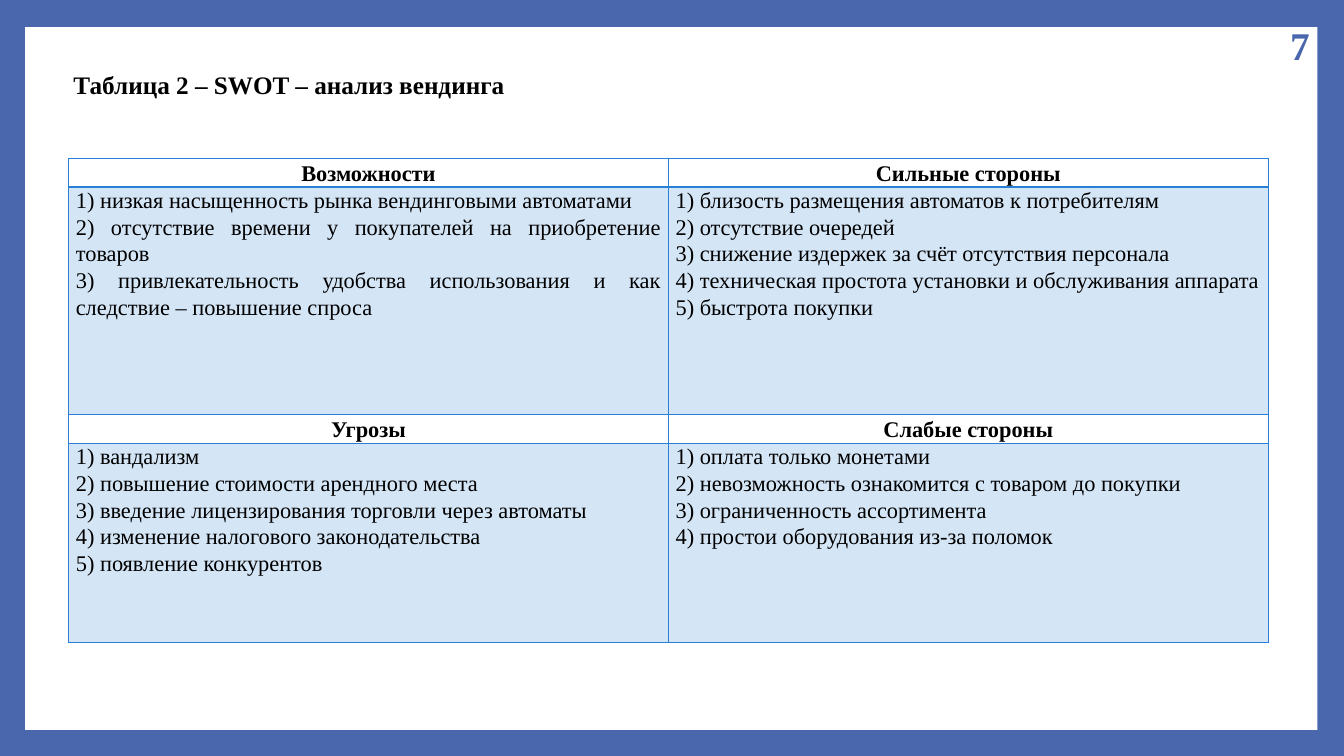
from lxml.etree import SubElement
from pptx import Presentation
from pptx.dml.color import RGBColor
from pptx.enum.shapes import MSO_SHAPE as Shape
from pptx.enum.text import MSO_ANCHOR as Anchor, MSO_AUTO_SIZE as AutoSize, PP_ALIGN as Align
from pptx.oxml.ns import qn
from pptx.util import Pt

FRAME_BLUE = RGBColor(0x4A, 0x66, 0xAC)
TABLE_BLUE = RGBColor(0x29, 0x7F, 0xD5)
WHITE = RGBColor(0xFF, 0xFF, 0xFF)
BLACK = RGBColor(0x00, 0x00, 0x00)

ROW_HEIGHTS = [20.5, 162.5, 20.5, 142.5]
SWOT = [
    [["Возможности"], ["Сильные стороны"]],
    [
        [
            "1) низкая насыщенность рынка вендинговыми автоматами",
            "2) отсутствие времени у покупателей на приобретение товаров",
            "3) привлекательность удобства использования и как следствие – повышение спроса",
        ],
        [
            "1) близость размещения автоматов к потребителям",
            "2) отсутствие очередей",
            "3) снижение издержек за счёт отсутствия персонала",
            "4) техническая простота установки и обслуживания аппарата",
            "5) быстрота покупки",
        ],
    ],
    [["Угрозы"], ["Слабые стороны"]],
    [
        [
            "1) вандализм",
            "2) повышение стоимости арендного места",
            "3) введение лицензирования торговли через автоматы",
            "4) изменение налогового законодательства",
            "5) появление конкурентов",
        ],
        [
            "1) оплата только монетами",
            "2) невозможность ознакомится с товаром до покупки",
            "3) ограниченность ассортимента",
            "4) простои оборудования из-за поломок",
        ],
    ],
]


class SlideBuilder:
    """Draws styled elements on one slide, with lengths in points."""

    font_name = "Times New Roman"

    def __init__(self, slide):
        self.slide = slide

    def background(self, color):
        fill = self.slide.background.fill
        fill.solid()
        fill.fore_color.rgb = color

    def panel(self, left, top, width, height, color):
        shape = self.slide.shapes.add_shape(
            Shape.RECTANGLE, Pt(left), Pt(top), Pt(width), Pt(height))
        shape.shadow.inherit = False
        shape.fill.solid()
        shape.fill.fore_color.rgb = color
        shape.line.fill.background()

    def add_lines(self, frame, lines, size, color=BLACK, bold=False,
                  align=Align.LEFT, spacing=1.0):
        for index, line in enumerate(lines):
            paragraph = frame.add_paragraph() if index else frame.paragraphs[0]
            paragraph.alignment = align
            paragraph.line_spacing = spacing
            run = paragraph.add_run()
            run.text = line
            run.font.name = self.font_name
            run.font.size = Pt(size)
            run.font.bold = bold
            run.font.color.rgb = color

    def text(self, left, top, width, height, line, size, color=BLACK,
             align=Align.LEFT, anchor=Anchor.TOP, auto_size=AutoSize.NONE):
        box = self.slide.shapes.add_textbox(Pt(left), Pt(top), Pt(width), Pt(height))
        frame = box.text_frame
        frame.word_wrap = True
        frame.auto_size = auto_size
        frame.vertical_anchor = anchor
        self.add_lines(frame, [line], size, color, True, align)

    def border(self, cell, side, width):
        line = SubElement(cell._tc.get_or_add_tcPr(), qn(f"a:ln{side}"), w=str(Pt(width)))
        fill = SubElement(line, qn("a:solidFill"))
        SubElement(fill, qn("a:srgbClr"), val=str(TABLE_BLUE))

    def tint(self, cell):
        cell.fill.solid()
        cell.fill.fore_color.rgb = TABLE_BLUE
        color = cell._tc.tcPr.find(f"{qn('a:solidFill')}/{qn('a:srgbClr')}")
        SubElement(color, qn("a:alpha"), val="20000")

    def cell(self, cell, lines, is_header, top_width, bottom_width):
        cell.margin_left = cell.margin_right = Pt(5.2)
        cell.margin_top = cell.margin_bottom = Pt(0)
        cell.vertical_anchor = Anchor.MIDDLE if is_header else Anchor.TOP
        align = Align.CENTER if is_header else Align.JUSTIFY
        self.add_lines(cell.text_frame, lines, 16, bold=is_header, align=align, spacing=1.07)
        for side, width in zip("LRTB", (1, 1, top_width, bottom_width)):
            self.border(cell, side, width)
        if is_header:
            cell.fill.background()
        else:
            self.tint(cell)

    def table(self, left, top, width, row_heights, rows):
        column_count = len(rows[0])
        table = self.slide.shapes.add_table(
            len(rows), column_count, Pt(left), Pt(top), Pt(width), Pt(sum(row_heights))).table
        table.first_row = table.horz_banding = False
        for column in table.columns:
            column.width = Pt(width / column_count)
        for row_index, (height, row) in enumerate(zip(row_heights, rows)):
            table.rows[row_index].height = Pt(height)
            top_width = 2 if row_index == 1 else 1
            bottom_width = 2 if row_index == 0 else 1
            for column_index, lines in enumerate(row):
                self.cell(table.cell(row_index, column_index), lines,
                          row_index % 2 == 0, top_width, bottom_width)


def main():
    presentation = Presentation()
    presentation.slide_width, presentation.slide_height = Pt(960), Pt(540)
    builder = SlideBuilder(presentation.slides.add_slide(presentation.slide_layouts[6]))
    builder.background(FRAME_BLUE)
    builder.panel(18, 19.4, 923, 502, WHITE)
    builder.text(45.4, 46, 564.5, 29, "Таблица 2 – SWOT – анализ вендинга", 18,
                 auto_size=AutoSize.SHAPE_TO_FIT_TEXT)
    builder.table(49, 113, 856.8, ROW_HEIGHTS, SWOT)
    builder.text(914.4, 17.3, 25.2, 28.8, "7", 28, FRAME_BLUE, Align.RIGHT, Anchor.MIDDLE)
    presentation.save("out.pptx")


if __name__ == "__main__":
    main()
